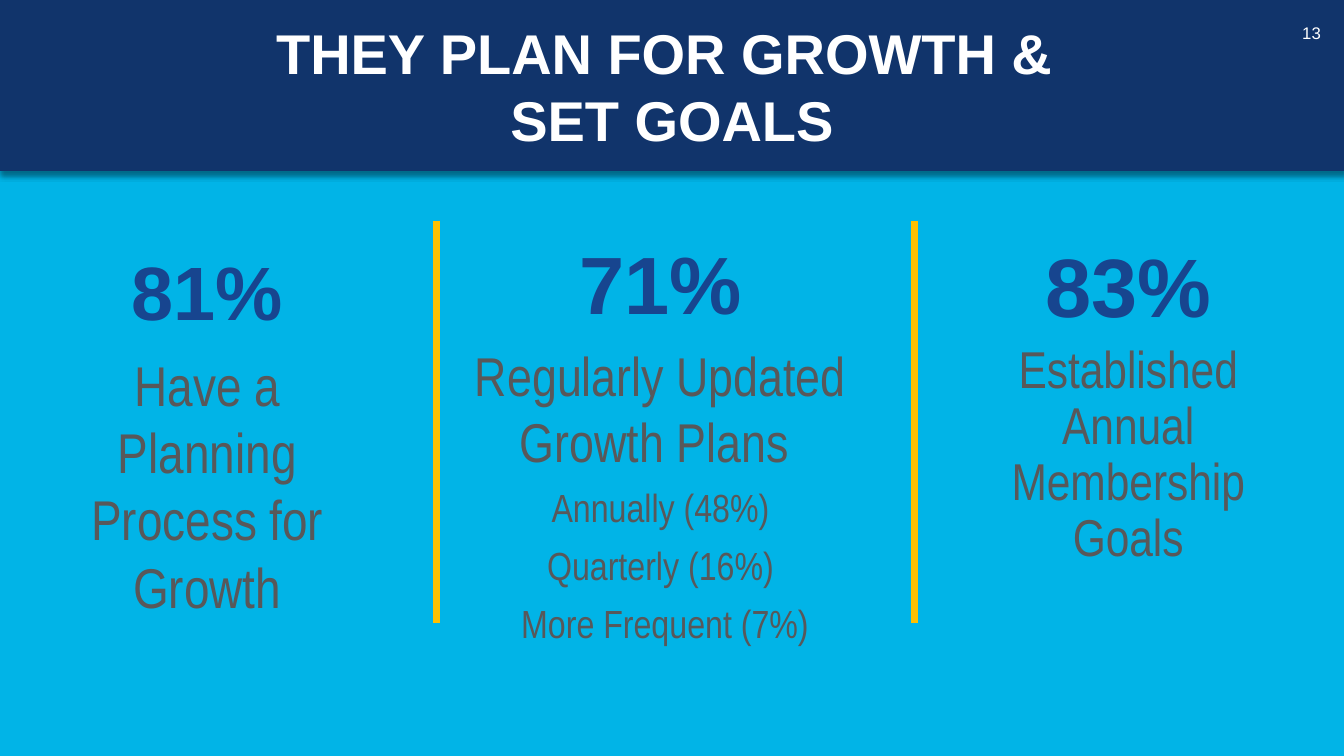
from lxml import etree
from pptx import Presentation
from pptx.dml.color import RGBColor
from pptx.enum.shapes import MSO_CONNECTOR, MSO_SHAPE
from pptx.enum.text import MSO_ANCHOR, PP_ALIGN
from pptx.oxml.ns import qn
from pptx.util import Inches, Pt

WIDTH, HEIGHT = 13.33, 7.5
STRAIGHT, RECTANGLE = MSO_CONNECTOR.STRAIGHT, MSO_SHAPE.RECTANGLE
TOP, MIDDLE = MSO_ANCHOR.TOP, MSO_ANCHOR.MIDDLE
CENTER, RIGHT = PP_ALIGN.CENTER, PP_ALIGN.RIGHT

COLORS = {
    "sky": "01B4E7", "navy": "11346B", "blue": "17458F", "gold": "FFC000",
    "gray": "58585A", "white": "FFFFFF", "black": "000000",
}
NARROW_INSETS = (0.07, 0.04)
WIDE_INSETS = (0.1, 0.05)


def color(name):
    return RGBColor.from_string(COLORS[name])


def across(percent):
    """Share of the slide's width."""
    return Inches(WIDTH * percent / 100)


def down(percent):
    """Share of the slide's height."""
    return Inches(HEIGHT * percent / 100)


def area(left, top, width, height):
    return across(left), down(top), across(width), down(height)


def prepare_frame(shape, insets, anchor=TOP):
    frame = shape.text_frame
    frame.word_wrap = True
    frame.vertical_anchor = anchor
    frame.margin_left = frame.margin_right = Inches(insets[0])
    frame.margin_top = frame.margin_bottom = Inches(insets[1])
    return frame


def write(frame, text, size, ink, font="Arial", bold=False, align=CENTER,
          before=0, spacing=None):
    """Fill the empty first paragraph, or append another one."""
    first = not frame.paragraphs[0].runs
    para = frame.paragraphs[0] if first else frame.add_paragraph()
    para.alignment = align
    para.space_before = Pt(0 if first else before)
    if spacing:
        para.line_spacing = spacing
    span = para.add_run()
    span.text = text
    span.font.size = Pt(size)
    span.font.name = font
    span.font.bold = bold
    span.font.color.rgb = color(ink)


def add_effects(shape):
    return etree.SubElement(shape._element.spPr, qn("a:effectLst"))


def add_header(page, lines):
    band = page.shapes.add_shape(RECTANGLE, *area(0, 0, 100, 22.6))
    band.fill.solid()
    band.fill.fore_color.rgb = color("navy")
    band.line.color.rgb = color("navy")
    band.line.width = Pt(1)
    # Soft shadow below the band
    shadow = etree.SubElement(
        add_effects(band), qn("a:outerShdw"), blurRad=str(Pt(4)),
        dist=str(Pt(3)), dir="5400000", rotWithShape="0")
    tint = etree.SubElement(shadow, qn("a:srgbClr"), val=COLORS["black"])
    etree.SubElement(tint, qn("a:alpha"), val="40000")
    frame = prepare_frame(band, NARROW_INSETS, MIDDLE)
    for line in lines:
        write(frame, line, 40, "white", bold=True)


def add_divider(page, left):
    divider = page.shapes.add_connector(
        STRAIGHT, across(left), down(29.2), across(left), down(82.4))
    divider.line.color.rgb = color("gold")
    divider.line.width = Pt(5)
    add_effects(divider)


def add_statistic(page, place, figure, figure_size, caption, caption_size,
                  details=(), insets=NARROW_INSETS, before=7.5,
                  figure_spacing=0.9, caption_spacing=None):
    box = page.shapes.add_textbox(*area(*place))
    frame = prepare_frame(box, insets)
    write(frame, figure, figure_size, "blue", bold=True,
          spacing=figure_spacing)
    write(frame, caption, caption_size, "gray", font="Arial Narrow",
          before=before, spacing=caption_spacing)
    for detail in details:
        write(frame, detail, 28, "gray", font="Arial Narrow", before=before)


def add_page_number(page, number):
    box = page.shapes.add_textbox(*area(95.57, 1.73, 3.45, 5.33))
    frame = prepare_frame(box, WIDE_INSETS, MIDDLE)
    write(frame, number, 12, "white", align=RIGHT)


def main():
    deck = Presentation()
    deck.slide_width, deck.slide_height = Inches(WIDTH), Inches(HEIGHT)
    page = deck.slides.add_slide(deck.slide_layouts[6])
    page.background.fill.solid()
    page.background.fill.fore_color.rgb = color("sky")

    add_header(page, ["THEY PLAN FOR GROWTH & ", "SET GOALS"])

    # Three statistics
    add_statistic(page, (5.48, 33.07, 19.88, 41.2), "81%", 54,
                  "Have a Planning Process for Growth", 40,
                  insets=WIDE_INSETS, before=10)
    add_statistic(page, (32.93, 31.73, 32.41, 58.13), "71%", 58,
                  "Regularly Updated Growth Plans ", 39,
                  details=["Annually (48%)", "Quarterly (16%)",
                           " More Frequent (7%)"])
    add_statistic(page, (73.29, 33.07, 21.31, 44.67), "83%", 59.2,
                  "Established Annual Membership Goals", 37,
                  figure_spacing=0.8, caption_spacing=0.9)

    # Rules between the columns
    for left in (32.48, 68.04):
        add_divider(page, left)

    add_page_number(page, "13")
    deck.save("out.pptx")


if __name__ == "__main__":
    main()
